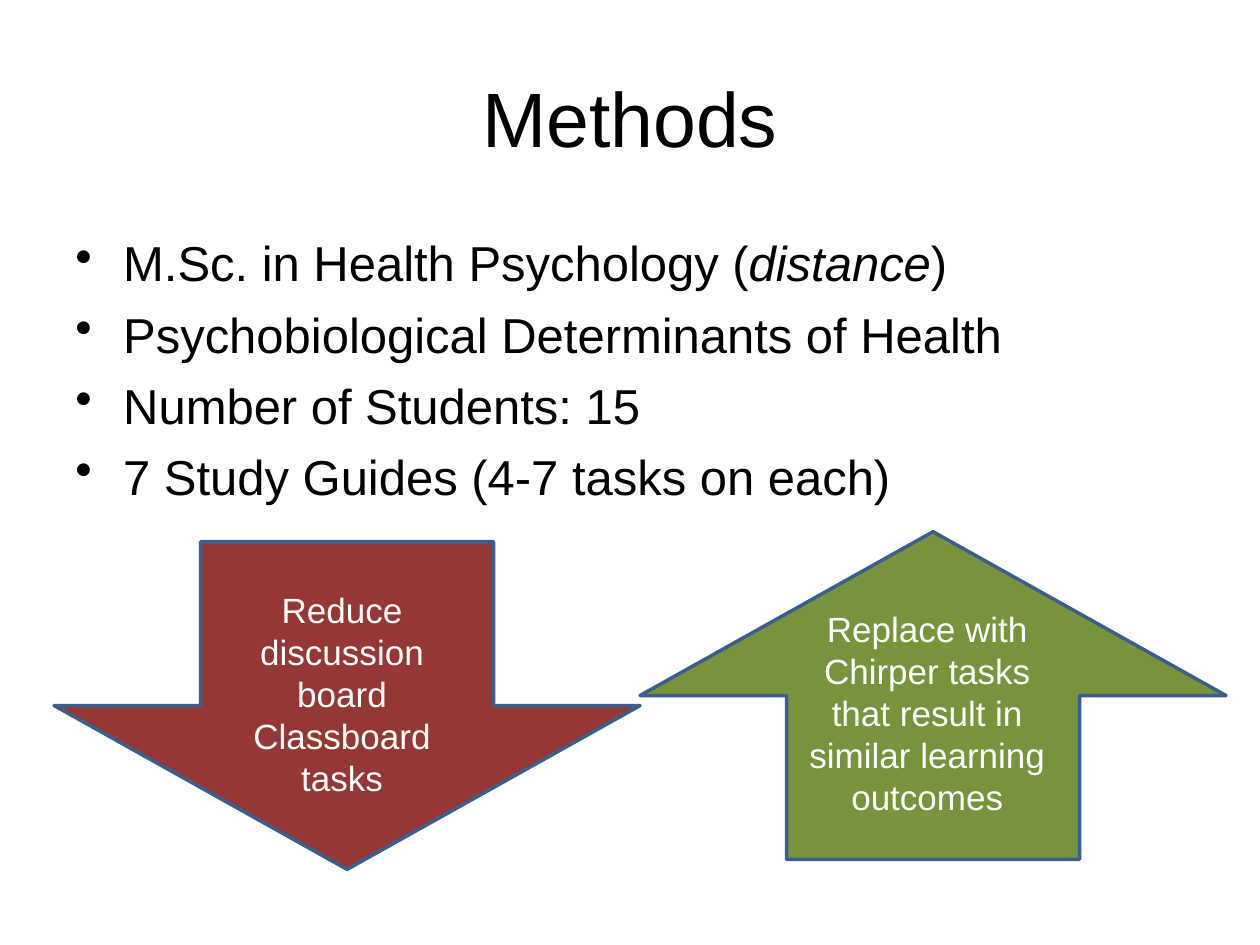
import pptx
import pptx.util
import pptx.dml.color
import pptx.enum.shapes
import pptx.enum.text
import pptx.oxml.ns
import lxml.etree

Inches = pptx.util.Inches
Pt = pptx.util.Pt
RGB = pptx.dml.color.RGBColor
ALIGN = pptx.enum.text.PP_ALIGN
ANCHOR = pptx.enum.text.MSO_ANCHOR

BLACK = RGB(0x00, 0x00, 0x00)
WHITE = RGB(0xFF, 0xFF, 0xFF)
RED = RGB(0x95, 0x37, 0x35)
GREEN = RGB(0x77, 0x93, 0x3C)
EDGE = RGB(0x3A, 0x5F, 0x8C)
FONT = "Arial"
ARROW_W, ARROW_H = 4.65, 2.6

POINTS = [
    [("M.Sc. in Health Psychology (", False), ("distance", True), (")", False)],
    [("Psychobiological Determinants of Health", False)],
    [("Number of Students: 15", False)],
    [("7 Study Guides (4-7 tasks on each)", False)],
]


def place(shape, box):
    shape.left, shape.top, shape.width, shape.height = map(Inches, box)


def add_bullet(para):
    props = para._p.get_or_add_pPr()
    props.set("marL", str(Inches(0.38)))
    props.set("indent", str(Inches(-0.38)))
    mark = lxml.etree.SubElement(props, pptx.oxml.ns.qn("a:buChar"))
    mark.set("char", "•")


def write(shape, paras, size, color, align=ALIGN.LEFT, anchor=ANCHOR.TOP,
          bullet=False, gap=0):
    """Fill a shape with paragraphs, each a list of (text, italic) runs."""
    frame = shape.text_frame
    frame.word_wrap = True
    frame.auto_size = pptx.enum.text.MSO_AUTO_SIZE.NONE
    frame.vertical_anchor = anchor
    for i, runs in enumerate(paras):
        para = frame.add_paragraph() if i else frame.paragraphs[0]
        para.alignment = align
        para.space_before = Pt(gap if i else 0)
        if bullet:
            add_bullet(para)
        for text, slant in runs:
            run = para.add_run()
            run.text = text
            run.font.name = FONT
            run.font.size = Pt(size)
            run.font.italic = slant
            run.font.color.rgb = color


def add_title(slide, box, text):
    title = slide.shapes.title
    place(title, box)
    write(title, [[(text, False)]], 44, BLACK, ALIGN.CENTER, ANCHOR.MIDDLE)


def add_points(slide, box):
    body = slide.shapes.add_textbox(*map(Inches, box))
    write(body, POINTS, 28, BLACK, bullet=True, gap=7)


def add_arrow(slide, left, top, label, text, fill, turn=0):
    """Group a block arrow with its label, given relative to the arrow."""
    group = slide.shapes.add_group_shape()
    arrow = group.shapes.add_shape(
        pptx.enum.shapes.MSO_SHAPE.DOWN_ARROW,
        *map(Inches, (left, top, ARROW_W, ARROW_H)))
    arrow.rotation = turn
    arrow.shadow.inherit = False
    arrow.fill.solid()
    arrow.fill.fore_color.rgb = fill
    arrow.line.color.rgb = EDGE
    arrow.line.width = Pt(2)
    x, y, wide, high = label
    box = group.shapes.add_textbox(
        *map(Inches, (left + x, top + y, wide, high)))
    write(box, [[(text, False)]], 20, WHITE, ALIGN.CENTER)


def main():
    deck = pptx.Presentation()
    deck.slide_width, deck.slide_height = Inches(10), Inches(7.5)
    slide = deck.slides.add_slide(deck.slide_layouts[5])
    add_title(slide, (0.5, 0.3, 9, 1.25), "Methods")
    add_points(slide, (0.5, 1.8, 9, 2.4))
    add_arrow(slide, 0.43, 4.3, (1.42, 0.32, 1.73, 1.78),
              "Reduce discussion board Classboard tasks", RED)
    add_arrow(slide, 0.43 + ARROW_W, 4.22, (1.18, 0.55, 2.2, 1.78),
              "Replace with Chirper tasks that result in similar learning "
              "outcomes", GREEN, turn=180)
    deck.save("out.pptx")


if __name__ == "__main__":
    main()
